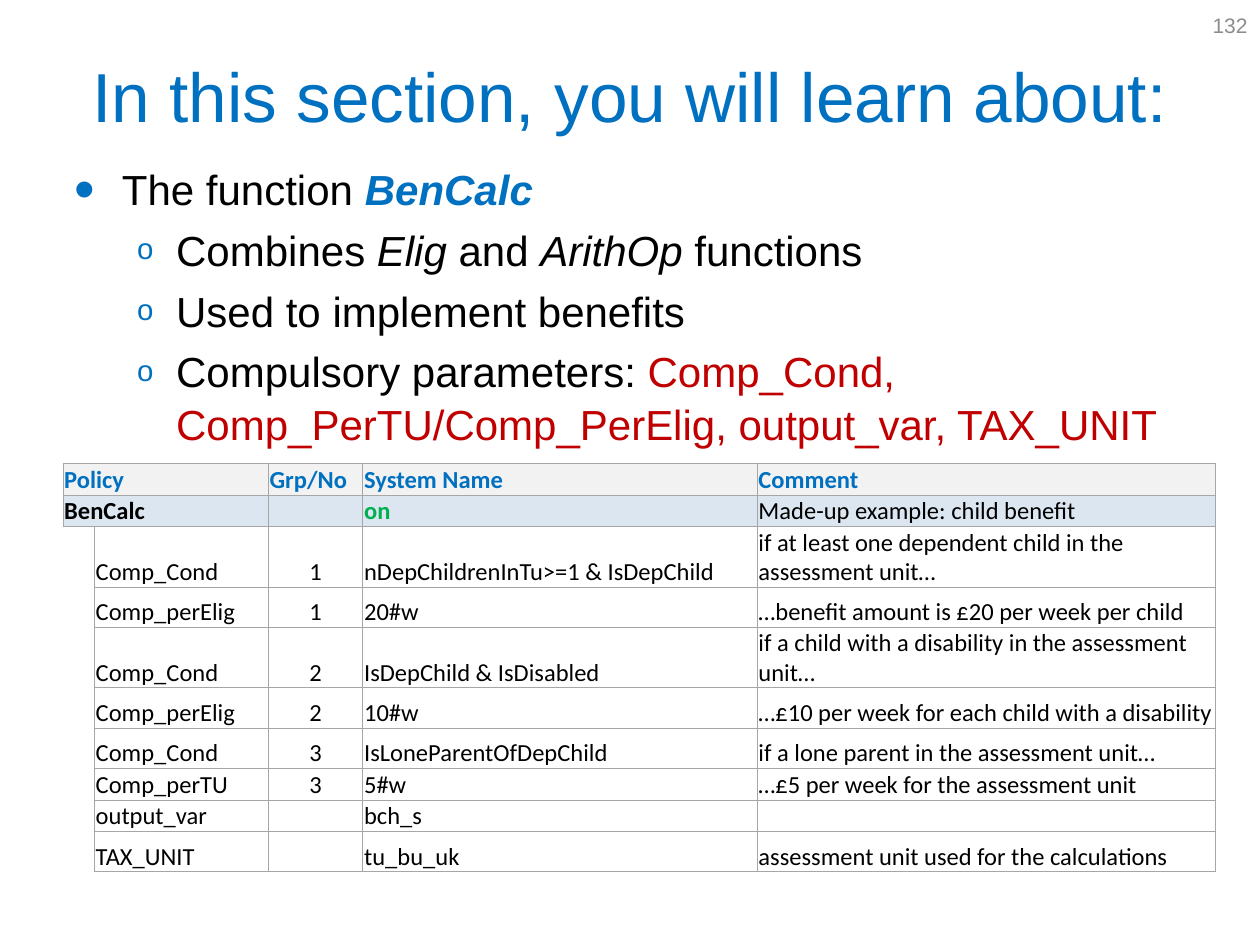
from lxml import etree
from pptx import Presentation
from pptx.dml.color import RGBColor
from pptx.enum.text import MSO_ANCHOR, PP_ALIGN
from pptx.oxml.ns import qn
from pptx.util import Inches, Pt

MIDDLE, BOTTOM = MSO_ANCHOR.MIDDLE, MSO_ANCHOR.BOTTOM
LEFT, CENTER, RIGHT = PP_ALIGN.LEFT, PP_ALIGN.CENTER, PP_ALIGN.RIGHT
TITLE_ONLY = 5

COLORS = {
    "blue": "0070C0", "red": "C00000", "green": "00B050", "black": "000000",
    "page": "8C8C8C", "border": "A6A6A6", "header": "F2F2F2",
    "function": "DCE6F1", "white": "FFFFFF",
}

OUTLINE = [
    (0, [("The function ", {}),
         ("BenCalc", {"color": "blue", "bold": True, "italic": True})]),
    (1, [("Combines ", {}), ("Elig ", {"italic": True}), ("and ", {}),
         ("ArithOp ", {"italic": True}), ("functions", {})]),
    (1, [("Used to implement benefits", {})]),
    (1, [("Compulsory parameters: ", {}),
         ("Comp_Cond, Comp_PerTU/Comp_PerElig, output_var, TAX_UNIT",
          {"color": "red"})]),
]
BULLETS = [
    {"char": "•", "percent": 140, "margin": 0.38, "indent": -0.38},
    {"char": "o", "percent": 70, "margin": 0.81, "indent": -0.31},
]

COLUMN_WIDTHS = [0.25, 1.38, 0.75, 3.13, 3.64]
SHORT, MEDIUM, TALL = 0.25, 0.32, 0.48
POLICY_ROWS = [
    (SHORT, ["Policy", "", "Grp/No", "System Name", "Comment"]),
    (SHORT, ["BenCalc", "", "", "on", "Made-up example: child benefit"]),
    (TALL, ["", "Comp_Cond", "1", "nDepChildrenInTu>=1 & IsDepChild",
            "if at least one dependent child in the assessment unit…"]),
    (MEDIUM, ["", "Comp_perElig", "1", "20#w",
              "…benefit amount is £20 per week per child"]),
    (TALL, ["", "Comp_Cond", "2", "IsDepChild & IsDisabled",
            "if a child with a disability in the assessment unit…"]),
    (MEDIUM, ["", "Comp_perElig", "2", "10#w",
              "…£10 per week for each child with a disability"]),
    (MEDIUM, ["", "Comp_Cond", "3", "IsLoneParentOfDepChild",
              "if a lone parent in the assessment unit…"]),
    (SHORT, ["", "Comp_perTU", "3", "5#w",
             "…£5 per week for the assessment unit"]),
    (SHORT, ["", "output_var", "", "bch_s", ""]),
    (MEDIUM, ["", "TAX_UNIT", "", "tu_bu_uk",
              "assessment unit used for the calculations"]),
]


def set_all(target, values):
    """Set every attribute named in a dict."""
    for name, value in values.items():
        setattr(target, name, value)


def format_font(font, color="black", **values):
    """Give a font its colour and other values."""
    set_all(font, values)
    font.color.rgb = RGBColor.from_string(COLORS[color])


def add_bullet(paragraph, char, percent, margin, indent):
    """Add a blue bullet with a hanging indent."""
    properties = paragraph._p.get_or_add_pPr()
    properties.set("marL", str(Inches(margin)))
    properties.set("indent", str(Inches(indent)))
    color = etree.SubElement(properties, qn("a:buClr"))
    etree.SubElement(color, qn("a:srgbClr"), val=COLORS["blue"])
    etree.SubElement(properties, qn("a:buSzPct"), val=str(percent * 1000))
    etree.SubElement(properties, qn("a:buFont"), typeface="Arial")
    etree.SubElement(properties, qn("a:buChar"), char=char)


def add_borders(cell, visible_sides):
    """Draw thin borders on the named sides and clear the others."""
    properties = cell._tc.get_or_add_tcPr()
    for side in "LRTB":
        line = etree.SubElement(properties, qn(f"a:ln{side}"), w=str(Pt(0.5)))
        if side in visible_sides:
            fill = etree.SubElement(line, qn("a:solidFill"))
            etree.SubElement(fill, qn("a:srgbClr"), val=COLORS["border"])
        else:
            etree.SubElement(line, qn("a:noFill"))


def place_title(slide, left, top, width, height):
    """Move and format the title placeholder."""
    title = slide.shapes.title
    set_all(title, {"left": left, "top": top, "width": width, "height": height})
    title.text_frame.text = "In this section, you will learn about:"
    title.text_frame.vertical_anchor = MIDDLE
    heading = title.text_frame.paragraphs[0]
    heading.alignment = CENTER
    format_font(heading.runs[0].font, "blue", name="Arial", size=Pt(39.6))


def place_outline(slide, left, top, width, height):
    """Add the bulleted outline."""
    frame = slide.shapes.add_textbox(left, top, width, height).text_frame
    frame.word_wrap = True
    for index, (level, parts) in enumerate(OUTLINE):
        paragraph = frame.add_paragraph() if index else frame.paragraphs[0]
        add_bullet(paragraph, **BULLETS[level])
        set_all(paragraph, {"level": level, "line_spacing": 1.05,
                            "space_before": Pt(4.5 if index else 0)})
        for text, values in parts:
            run = paragraph.add_run()
            run.text = text
            format_font(run.font, **{"name": "Arial", "size": Pt(24), **values})


def place_page_number(slide, left, top, width, height):
    """Add the page number in the corner."""
    frame = slide.shapes.add_textbox(left, top, width, height).text_frame
    set_all(frame, {"word_wrap": True, "vertical_anchor": MIDDLE,
                    "margin_right": Inches(0.1)})
    number = frame.paragraphs[0]
    number.text = "132"
    number.alignment = RIGHT
    format_font(number.runs[0].font, "page", name="Arial", size=Pt(12))


def fill_cell(cell, text, row, column):
    """Write and format one cell by its place in the table."""
    is_gutter = row > 1 and column == 0
    visible_sides = "LRTB"
    if is_gutter:
        visible_sides = "RT" if row == 2 else "R"
    add_borders(cell, visible_sides)

    fill_name = {0: "header", 1: "function"}.get(row, "white" if is_gutter else None)
    if fill_name:
        cell.fill.solid()
        cell.fill.fore_color.rgb = RGBColor.from_string(COLORS[fill_name])
    else:
        cell.fill.background()

    set_all(cell, {"margin_left": Inches(0.01), "margin_right": Inches(0.01),
                   "margin_top": Inches(0.01), "margin_bottom": 0,
                   "vertical_anchor": MIDDLE if row < 2 else BOTTOM})
    paragraph = cell.text_frame.paragraphs[0]
    paragraph.alignment = CENTER if row > 1 and column == 2 else LEFT
    values = {"name": "Calibri", "size": Pt(14),
              "bold": row == 0 or (row == 1 and column < 4)}
    color = "blue" if row == 0 else "green" if text == "on" else "black"
    if text:
        paragraph.text = text
        format_font(paragraph.runs[0].font, color, **values)
    else:
        end_properties = etree.SubElement(paragraph._p, qn("a:endParaRPr"))
        end_properties.set("sz", "1400")
        etree.SubElement(end_properties, qn("a:latin"), typeface="Calibri")


def place_policy_table(slide, left, top, width, height):
    """Add the policy table."""
    table = slide.shapes.add_table(len(POLICY_ROWS), len(COLUMN_WIDTHS),
                                   left, top, width, height).table
    set_all(table, {"first_row": False, "horz_banding": False})
    for column, column_width in zip(table.columns, COLUMN_WIDTHS):
        column.width = Inches(column_width)
    for row, (row_height, texts) in enumerate(POLICY_ROWS):
        table.rows[row].height = Inches(row_height)
        for column, text in enumerate(texts):
            fill_cell(table.cell(row, column), text, row, column)
    for row in range(2):
        table.cell(row, 0).merge(table.cell(row, 1))


def main():
    """Build and save the slide."""
    presentation = Presentation()
    presentation.slide_width, presentation.slide_height = Inches(10), Inches(7.5)
    slide = presentation.slides.add_slide(presentation.slide_layouts[TITLE_ONLY])
    place_title(slide, Inches(0.5), Inches(0.13), Inches(9), Inches(1.25))
    place_outline(slide, Inches(0.49), Inches(1.23), Inches(9), Inches(4.95))
    place_page_number(slide, Inches(7.67), 0, Inches(2.33), Inches(0.4))
    place_policy_table(slide, Inches(0.5), Inches(3.68), Inches(9.15), Inches(3.24))
    presentation.save("out.pptx")


if __name__ == "__main__":
    main()
